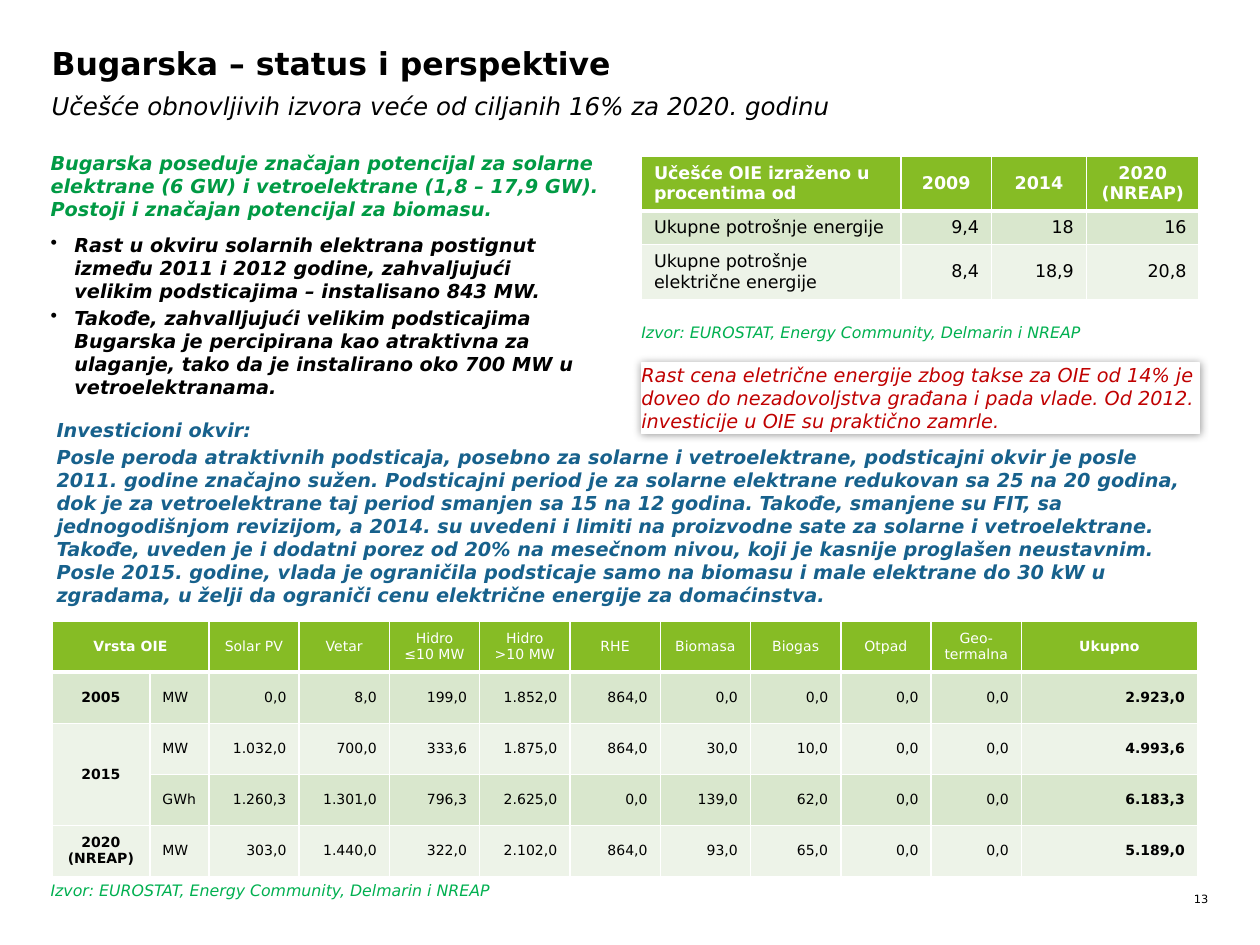
"""Build the slide on renewable energy in Bulgaria: status and outlook."""
from dataclasses import dataclass

from lxml.etree import SubElement
from pptx import Presentation
from pptx.dml.color import RGBColor
from pptx.enum.shapes import MSO_SHAPE
from pptx.enum.text import MSO_ANCHOR, PP_ALIGN
from pptx.oxml import parse_xml
from pptx.oxml.ns import nsdecls, qn
from pptx.util import Cm, Pt


@dataclass(frozen=True)
class Theme:
    font: str = "DejaVu Sans"
    black: str = "000000"
    white: str = "FFFFFF"
    lime: str = "86BC25"
    band_dark: str = "D9E7CD"
    band_light: str = "EDF3E8"
    source_green: str = "00B050"
    lead_green: str = "009A44"
    blue: str = "17618C"
    red: str = "C00000"
    title: float = 18
    subtitle: float = 14
    body: float = 11
    share: float = 10
    source: float = 9
    capacity: float = 8
    number: float = 6.5


theme = Theme()
ALIGN = {"l": PP_ALIGN.LEFT, "c": PP_ALIGN.CENTER, "r": PP_ALIGN.RIGHT}


def write(frame, text, size, color, style="", align="l", bullet=False):
    frame.word_wrap = True
    for index, line in enumerate(text.split("\n")):
        para = frame.add_paragraph() if index else frame.paragraphs[0]
        para.alignment = ALIGN[align]
        if index and style:
            para.space_before = Pt(2)
        if bullet:
            properties = para._p.get_or_add_pPr()
            properties.set("marL", str(Cm(0.48)))
            properties.set("indent", str(-Cm(0.48)))
            SubElement(properties, qn("a:buChar")).set("char", "•")
        span = para.add_run()
        span.text = line
        span.font.name = theme.font
        span.font.size = Pt(size)
        span.font.bold = "b" in style
        span.font.italic = "i" in style
        span.font.color.rgb = RGBColor.from_string(color)


def add_grid(page, left, top, widths, heights, rows, size, header_align, body_align, bold_header, bold_columns):
    table = page.shapes.add_table(
        len(rows), len(widths), Cm(left), Cm(top), Cm(sum(widths)), Cm(sum(heights))
    ).table
    table.first_row = table.horz_banding = False
    for column, width in zip(table.columns, widths):
        column.width = Cm(width)
    for r, (values, height) in enumerate(zip(rows, heights)):
        table.rows[r].height = Cm(height)
        fill = (theme.band_dark if r % 2 else theme.band_light) if r else theme.lime
        for c, value in enumerate(values):
            cell = table.cell(r, c)
            cell.vertical_anchor = MSO_ANCHOR.MIDDLE
            cell.fill.solid()
            cell.fill.fore_color.rgb = RGBColor.from_string(fill)
            for position, side in enumerate("LRTB"):
                thick = (r == 0 and side == "B") or (r == 1 and side == "T")
                cell._tc.get_or_add_tcPr().insert(position, parse_xml(
                    f'<a:ln{side} {nsdecls("a")} w="{Pt(3 if thick else 1)}"><a:solidFill>'
                    f'<a:srgbClr val="{theme.white}"/></a:solidFill></a:ln{side}>'))
            if value:
                bold = c in bold_columns or (r == 0 and bold_header)
                write(cell.text_frame, value, size, theme.black if r else theme.white,
                      "b" if bold else "", (body_align if r else header_align)[c])
                for para in cell.text_frame.paragraphs:
                    para.space_before = Pt(0)
    return table


deck = Presentation()
deck.slide_width, deck.slide_height = Cm(25.4), Cm(19.05)
page = deck.slides.add_slide(deck.slide_layouts[6])

source = "Izvor: EUROSTAT, Energy Community, Delmarin i NREAP"
lead = (
    "Bugarska poseduje značajan potencijal za solarne elektrane (6 GW) i vetroelektrane "
    "(1,8 – 17,9 GW). Postoji i značajan potencijal za biomasu."
)
growth = (
    "Rast u okviru solarnih elektrana postignut između 2011 i 2012 godine, zahvaljujući "
    "velikim podsticajima – instalisano 843 MW.\n"
    "Takođe, zahvalljujući velikim podsticajima Bugarska je percipirana kao atraktivna za "
    "ulaganje, tako da je instalirano oko 700 MW u vetroelektranama."
)
investment = (
    "Investicioni okvir:\n"
    "Posle peroda atraktivnih podsticaja, posebno za solarne i vetroelektrane, podsticajni okvir "
    "je posle 2011. godine značajno sužen. Podsticajni period je za solarne elektrane redukovan "
    "sa 25 na 20 godina, dok je za vetroelektrane taj period smanjen sa 15 na 12 godina. Takođe, "
    "smanjene su FIT, sa jednogodišnjom revizijom, a 2014. su uvedeni i limiti na proizvodne sate "
    "za solarne i vetroelektrane. Takođe, uveden je i dodatni porez od 20% na mesečnom nivou, koji "
    "je kasnije proglašen neustavnim. Posle 2015. godine, vlada je ograničila podsticaje samo na "
    "biomasu i male elektrane do 30 kW u zgradama, u želji da ograniči cenu električne energije "
    "za domaćinstva."
)
warning = (
    "Rast cena eletrične energije zbog takse za OIE od 14% je doveo do nezadovoljstva građana "
    "i pada vlade. Od 2012. investicije u OIE su praktično zamrle."
)

text_boxes = [
    (1.04, 0.89, 23.14, 1.02, "Bugarska – status i perspektive", theme.title, theme.black, "b", "l", False),
    (1.04, 1.83, 18, 0.61, "Učešće obnovljivih izvora veće od ciljanih 16% za 2020. godinu",
     theme.subtitle, theme.black, "i", "l", False),
    (1.02, 3.05, 11.3, 1.42, lead, theme.body, theme.lead_green, "bi", "l", False),
    (1.02, 4.7, 10.9, 3.35, growth, theme.body, theme.black, "bi", "l", True),
    (12.93, 6.5, 9.32, 0.38, source, theme.source, theme.source_green, "i", "l", False),
    (1.14, 8.43, 23.06, 3.84, investment, theme.body, theme.blue, "bi", "l", False),
    (1.02, 17.75, 9.32, 0.38, source, theme.source, theme.source_green, "i", "l", False),
    (23.72, 17.98, 0.64, 0.28, "13", theme.number, theme.black, "", "r", False),
]
for left, top, width, height, *content in text_boxes:
    frame = page.shapes.add_textbox(Cm(left), Cm(top), Cm(width), Cm(height)).text_frame
    frame.margin_left = frame.margin_right = frame.margin_top = frame.margin_bottom = 0
    write(frame, *content)

share_rows = [
    ["Učešće OIE izraženo u procentima od", "2009", "2014", "2020 (NREAP)"],
    ["Ukupne potrošnje energije", "9,4", "18", "16"],
    ["Ukupne potrošnje električne energije", "8,4", "18,9", "20,8"],
]
add_grid(page, 12.93, 3.15, [5.23, 1.83, 1.91, 2.27], [1.04, 0.66, 0.86], share_rows,
         theme.share, "lccc", "lrrr", True, ())

capacity_rows = [
    ["Vrsta OIE", "", "Solar PV", "Vetar", "Hidro\n≤10 MW", "Hidro\n>10 MW", "RHE",
     "Biomasa", "Biogas", "Otpad", "Geo-termalna", "Ukupno"],
    ["2005", "MW", "0,0", "8,0", "199,0", "1.852,0", "864,0", "0,0", "0,0", "0,0", "0,0", "2.923,0"],
    ["2015", "MW", "1.032,0", "700,0", "333,6", "1.875,0", "864,0", "30,0", "10,0", "0,0", "0,0", "4.993,6"],
    ["", "GWh", "1.260,3", "1.301,0", "796,3", "2.625,0", "0,0", "139,0", "62,0", "0,0", "0,0", "6.183,3"],
    ["2020\n(NREAP)", "MW", "303,0", "1.440,0", "322,0", "2.102,0", "864,0", "93,0", "65,0", "0,0", "0,0", "5.189,0"],
]
capacity = add_grid(page, 1.05, 12.52, [1.97, 1.19] + [1.82] * 9 + [3.55], [1.03] * 5, capacity_rows,
                    theme.capacity, "c" * 12, "cl" + "r" * 10, False, (0, 11))
capacity.cell(0, 0).merge(capacity.cell(0, 1))
capacity.cell(2, 0).merge(capacity.cell(3, 0))

callout = page.shapes.add_shape(MSO_SHAPE.RECTANGLE, Cm(12.93), Cm(7.32), Cm(11.25), Cm(1.42))
callout.fill.solid()
callout.fill.fore_color.rgb = RGBColor.from_string(theme.white)
callout.line.color.rgb = RGBColor.from_string(theme.white)
callout.line.width = Pt(0.75)
callout.shadow.inherit = False
callout._element.spPr.find(qn("a:effectLst")).append(parse_xml(
    f'<a:outerShdw {nsdecls("a")} blurRad="{Pt(5)}" dist="0" dir="0" algn="ctr" rotWithShape="0">'
    f'<a:srgbClr val="{theme.black}"><a:alpha val="40000"/></a:srgbClr></a:outerShdw>'))
frame = callout.text_frame
frame.margin_left = frame.margin_right = frame.margin_top = frame.margin_bottom = 0
frame.vertical_anchor = MSO_ANCHOR.TOP
write(frame, warning, theme.body, theme.red, "i")

deck.save("out.pptx")
